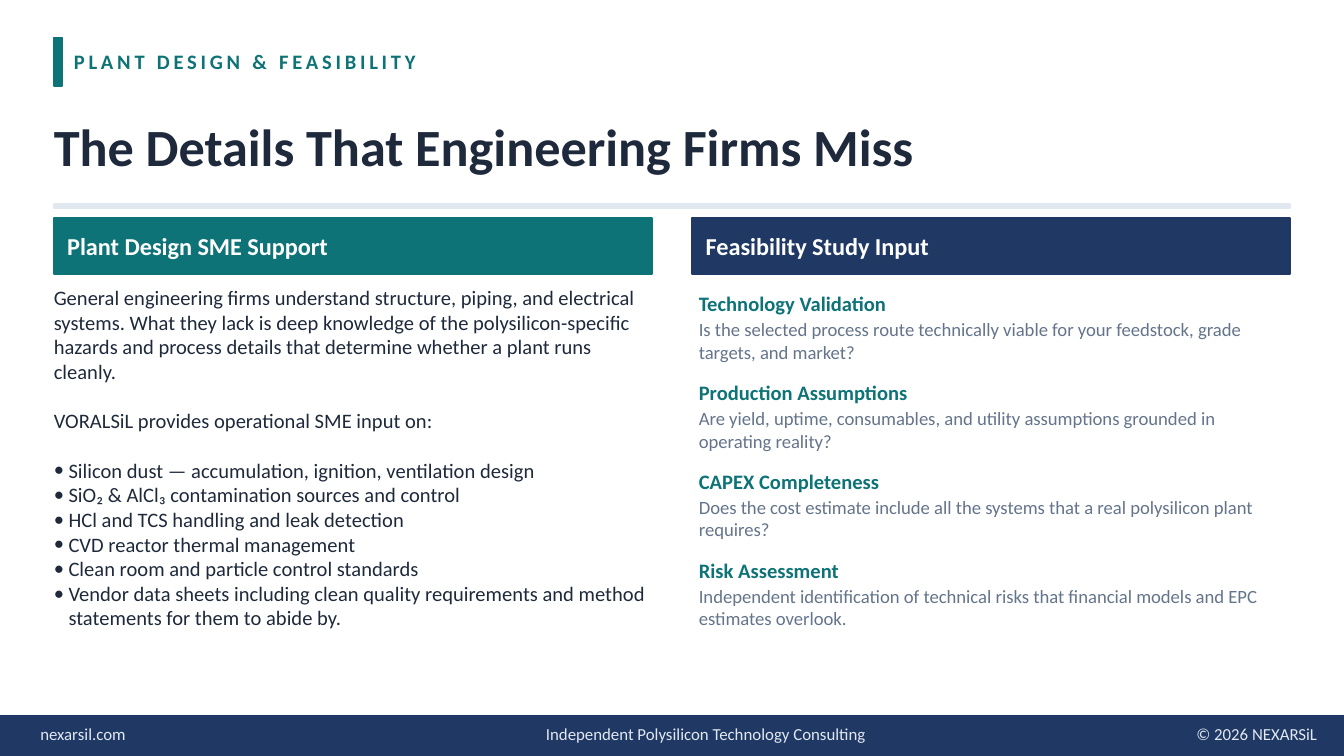
from dataclasses import dataclass
from lxml.etree import SubElement
from pptx import Presentation
from pptx.dml.color import RGBColor as Rgb
from pptx.enum.shapes import MSO_SHAPE as Shape
from pptx.enum.text import MSO_ANCHOR as Anchor, MSO_AUTO_SIZE as Fit, PP_ALIGN as Align
from pptx.oxml.ns import qn
from pptx.util import Inches, Pt


@dataclass(frozen=True)
class Theme:
    face: str = "Calibri"
    teal: str = "0D7377"
    navy: str = "1F3864"
    ink: str = "1E293B"
    gray: str = "64748B"
    pale: str = "E2E8F0"
    white: str = "FFFFFF"
    title: int = 28
    head: int = 13
    body: int = 11
    note: int = 10
    foot: int = 9


class Deck:
    """Holds the theme and the current slide, and draws each kind of element."""

    def __init__(self, theme):
        self.theme = theme
        self.prs = Presentation()
        self.prs.slide_width = Inches(10)
        self.prs.slide_height = Inches(10) * 9 // 16
        self.slide = self.prs.slides.add_slide(self.prs.slide_layouts[1])

    def bar(self, x, y, w, h, color):
        box = self.slide.shapes.add_shape(Shape.RECTANGLE, *map(Inches, (x, y, w, h)))
        box.shadow.inherit = False
        box.fill.solid()
        box.fill.fore_color.rgb = box.line.color.rgb = Rgb.from_string(color)
        box.line.width = Pt(1)

    def frame(self, box, x, y, w, h):
        box.left, box.top, box.width, box.height = map(Inches, (x, y, w, h))
        tf = box.text_frame
        tf.word_wrap, tf.auto_size = True, Fit.NONE
        tf.vertical_anchor = Anchor.MIDDLE
        tf.margin_left = tf.margin_right = tf.margin_top = tf.margin_bottom = 0
        return tf

    def style(self, para, size, color, bold=False, align=Align.LEFT):
        para.alignment = align
        font = para.font
        font.name, font.size, font.bold = self.theme.face, Pt(size), bold
        font.color.rgb = Rgb.from_string(color)

    def text(self, words, x, y, w, h, size, color, bold=False, align=Align.LEFT, track=0):
        tf = self.frame(self.slide.shapes.add_textbox(0, 0, 0, 0), x, y, w, h)
        para = tf.paragraphs[0]
        run = para.add_run()
        run.text = words
        if track:
            run._r.get_or_add_rPr().set("spc", str(track * 100))
        self.style(para, size, color, bold, align)

    def title(self, words, x, y, w, h):
        tf = self.frame(self.slide.shapes.title, x, y, w, h)
        tf.text = words
        self.style(tf.paragraphs[0], self.theme.title, self.theme.ink, True)

    def body(self, intro, items, x, y, w, h):
        tf = self.frame(self.slide.placeholders[1], x, y, w, h)
        tf.vertical_anchor = Anchor.TOP
        tf.text = "\n".join(intro + items)
        for i, para in enumerate(tf.paragraphs):
            listed = i >= len(intro)
            props = para._p.get_or_add_pPr()
            step = Inches(0.11) if listed else 0
            props.set("marL", str(step))
            props.set("indent", str(-step))
            if listed:
                SubElement(props, qn("a:buFont")).set("typeface", self.theme.face)
                SubElement(props, qn("a:buChar")).set("char", "•")
            else:
                SubElement(props, qn("a:buNone"))
            para.space_before = Pt(13.2 if 0 < i <= len(intro) else 0)
            self.style(para, self.theme.body, self.theme.ink)

    def panel(self, words, x, color):
        self.bar(x, 1.62, 4.45, 0.42, color)
        self.text(words, x + 0.1, 1.62, 4.25, 0.42, self.theme.head, self.theme.white, True)

    def topic(self, name, ask, y):
        self.text(name, 5.2, y, 4.3, 0.24, self.theme.body, self.theme.teal, True)
        self.text(ask, 5.2, y + 0.22, 4.3, 0.35, self.theme.note, self.theme.gray)


INTRO = [
    "General engineering firms understand structure, piping, and electrical systems. "
    "What they lack is deep knowledge of the polysilicon-specific hazards and process "
    "details that determine whether a plant runs cleanly.",
    "VORALSiL provides operational SME input on:",
]
ITEMS = [
    "Silicon dust — accumulation, ignition, ventilation design",
    "SiO₂ & AlCl₃ contamination sources and control",
    "HCl and TCS handling and leak detection",
    "CVD reactor thermal management",
    "Clean room and particle control standards",
    "Vendor data sheets including clean quality requirements and method statements "
    "for them to abide by.",
]
TOPICS = [
    ("Technology Validation", "Is the selected process route technically viable for "
     "your feedstock, grade targets, and market?"),
    ("Production Assumptions", "Are yield, uptime, consumables, and utility assumptions "
     "grounded in operating reality?"),
    ("CAPEX Completeness", "Does the cost estimate include all the systems that a real "
     "polysilicon plant requires?"),
    ("Risk Assessment", "Independent identification of technical risks that financial "
     "models and EPC estimates overlook."),
]
FOOT = [
    ("nexarsil.com", 0.3, 3, Align.LEFT),
    ("Independent Polysilicon Technology Consulting", 3, 4.5, Align.CENTER),
    ("© 2026 NEXARSiL", 7.2, 2.6, Align.RIGHT),
]


def main():
    look = Theme()
    deck = Deck(look)
    deck.bar(0.4, 0.28, 0.06, 0.36, look.teal)
    deck.text("PLANT DESIGN & FEASIBILITY", 0.55, 0.26, 8, 0.4,
              look.body, look.teal, True, track=2)
    deck.title("The Details That Engineering Firms Miss", 0.4, 0.72, 9.2, 0.72)
    deck.bar(0.4, 1.52, 9.2, 0.03, look.pale)
    deck.panel("Plant Design SME Support", 0.4, look.teal)
    deck.body(INTRO, ITEMS, 0.4, 2.12, 4.45, 2.78)
    deck.panel("Feasibility Study Input", 5.15, look.navy)
    for i, (name, ask) in enumerate(TOPICS):
        deck.topic(name, ask, 2.14 + 0.66 * i)
    deck.bar(0, 5.33, 10, 0.3, look.navy)
    for words, x, w, align in FOOT:
        deck.text(words, x, 5.33, w, 0.26, look.foot, look.pale, align=align)
    deck.prs.save("out.pptx")


if __name__ == "__main__":
    main()
